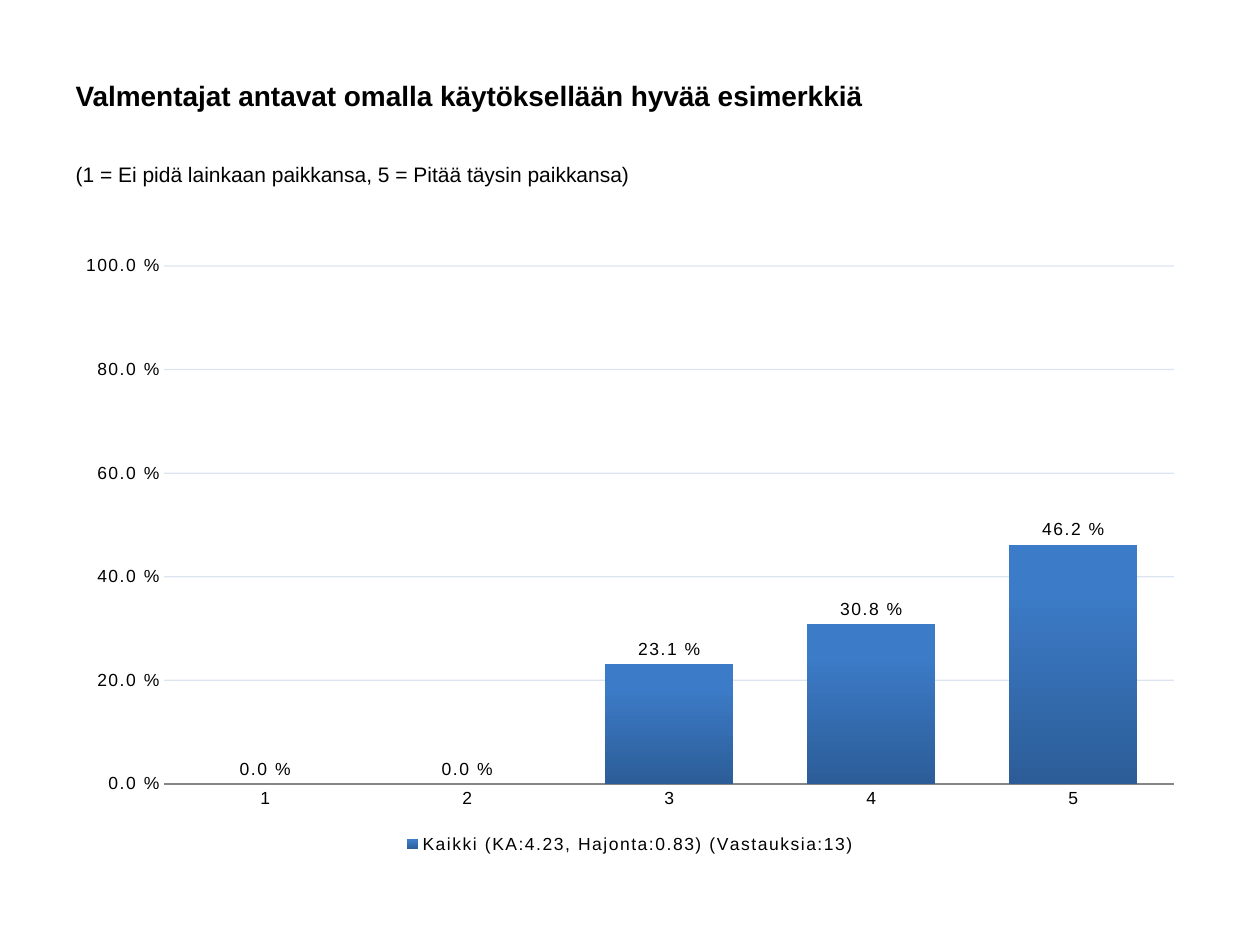
from dataclasses import dataclass

from lxml import etree
from pptx import Presentation
from pptx.chart.data import CategoryChartData
from pptx.dml.color import RGBColor
from pptx.enum.chart import XL_CHART_TYPE, XL_LABEL_POSITION, XL_LEGEND_POSITION, XL_TICK_MARK
from pptx.enum.text import MSO_ANCHOR, MSO_AUTO_SIZE, PP_ALIGN
from pptx.oxml import parse_xml
from pptx.oxml.ns import nsdecls, qn
from pptx.util import Pt

COLUMNS = XL_CHART_TYPE.COLUMN_CLUSTERED
BOTTOM = XL_LEGEND_POSITION.BOTTOM
OUTSIDE = XL_LABEL_POSITION.OUTSIDE_END
NO_TICK = XL_TICK_MARK.NONE
LEFT = PP_ALIGN.LEFT
MIDDLE, TOP = MSO_ANCHOR.MIDDLE, MSO_ANCHOR.TOP
FIXED = MSO_AUTO_SIZE.NONE

QUESTION = "Valmentajat antavat omalla käytöksellään hyvää esimerkkiä"
SCALE_NOTE = "(1 = Ei pidä lainkaan paikkansa, 5 = Pitää täysin paikkansa)"
GROUP = "Kaikki (KA:4.23, Hajonta:0.83) (Vastauksia:13)"
ANSWERS = {"1": 0, "2": 0, "3": 0.231, "4": 0.308, "5": 0.462}
PERCENT = "0.0\\ %"

PX = 914400 / 126
SLIDE = (1260, 945)
QUESTION_BOX = (63, 45, 1134, 100)
NOTE_BOX = (63, 155, 1134, 74)
CHART_BOX = (63, 244, 1134, 615)
PLOT_BOX = (164, 266, 1010, 518)


@dataclass(frozen=True)
class Theme:
    font: str = "Arial"
    text: str = "000000"
    grid: str = "4F81BD"
    axis: str = "868686"
    bar_bottom: str = "2C5D98"
    bar_top: str = "3C7BC7"
    question_size: int = 16
    note_size: int = 12
    chart_size: int = 10


THEME = Theme()


def emu(lengths):
    return [round(length * PX) for length in lengths]


def style_font(font, size, bold=False):
    for key, value in {"name": THEME.font, "size": Pt(size), "bold": bold}.items():
        setattr(font, key, value)
    font.color.rgb = RGBColor.from_string(THEME.text)


def place_text(holder, box, text, size, bold, anchor):
    holder.left, holder.top, holder.width, holder.height = emu(box)
    frame = holder.text_frame
    frame.text = text
    for key, value in {"vertical_anchor": anchor, "word_wrap": True, "auto_size": FIXED}.items():
        setattr(frame, key, value)
    paragraph = frame.paragraphs[0]
    paragraph.alignment = LEFT
    properties = paragraph._p.get_or_add_pPr()
    properties.set("marL", "0")
    properties.set("indent", "0")
    etree.SubElement(properties, qn("a:buNone"))
    style_font(paragraph.runs[0].font, size, bold)


def fix_plot_area(chart):
    left, top, width, height = CHART_BOX
    shares = {
        "x": (PLOT_BOX[0] - left) / width,
        "y": (PLOT_BOX[1] - top) / height,
        "w": PLOT_BOX[2] / width,
        "h": PLOT_BOX[3] / height,
    }
    modes = '<c:layoutTarget val="inner"/><c:xMode val="edge"/><c:yMode val="edge"/>'
    sizes = "".join(f'<c:{key} val="{share:.4f}"/>' for key, share in shares.items())
    layout = parse_xml(
        f'<c:layout {nsdecls("c")}><c:manualLayout>{modes}{sizes}</c:manualLayout></c:layout>'
    )
    plot_area = chart._chartSpace.xpath(".//c:plotArea")[0]
    for old in plot_area.findall(qn("c:layout")):
        plot_area.remove(old)
    plot_area.insert(0, layout)


def style_axes(chart):
    answers, shares = chart.category_axis, chart.value_axis
    for axis in (answers, shares):
        axis.major_tick_mark = axis.minor_tick_mark = NO_TICK
        style_font(axis.tick_labels.font, THEME.chart_size)
    answers.format.line.color.rgb = RGBColor.from_string(THEME.axis)
    answers.format.line.width = Pt(0.75)
    shares.format.line.fill.background()
    limits = {"minimum_scale": 0, "maximum_scale": 1, "major_unit": 0.2,
              "has_major_gridlines": True}
    for key, value in limits.items():
        setattr(shares, key, value)
    shares.tick_labels.number_format = PERCENT
    shares.tick_labels.number_format_is_linked = False
    grid = shares.major_gridlines.format.line
    grid.width = Pt(0.75)
    grid.color.rgb = RGBColor.from_string(THEME.grid)
    tint = shares.major_gridlines._xAx.xpath("c:majorGridlines//a:srgbClr")[0]
    etree.SubElement(tint, qn("a:alpha"), val="20000")


def style_bars(chart):
    plot = chart.plots[0]
    plot.gap_width = 58
    plot.vary_by_categories = False
    fill = plot.series[0].format.fill
    fill.gradient()
    fill.gradient_angle = 90
    shades = ((0, THEME.bar_bottom), (0.8, THEME.bar_top))
    for stop, (position, color) in zip(fill.gradient_stops, shades):
        stop.position = position
        stop.color.rgb = RGBColor.from_string(color)
    labels = plot.series[0].data_labels
    options = {"show_value": True, "number_format": PERCENT,
               "number_format_is_linked": False, "position": OUTSIDE}
    for key, value in options.items():
        setattr(labels, key, value)
    style_font(labels.font, THEME.chart_size)


def add_answers(slide):
    data = CategoryChartData(number_format=PERCENT)
    data.categories = list(ANSWERS)
    data.add_series(GROUP, list(ANSWERS.values()))
    chart = slide.shapes.add_chart(COLUMNS, *emu(CHART_BOX), data).chart
    style_font(chart.font, THEME.chart_size)
    chart.has_title = False
    chart.has_legend = True
    chart.legend.position = BOTTOM
    chart.legend.include_in_layout = False
    style_font(chart.legend.font, THEME.chart_size)
    style_axes(chart)
    style_bars(chart)
    fix_plot_area(chart)
    for properties in chart._chartSpace.xpath(".//a:defRPr"):
        properties.set("spc", "100")


def main():
    deck = Presentation()
    deck.slide_width, deck.slide_height = emu(SLIDE)
    slide = deck.slides.add_slide(deck.slide_layouts[1])
    question, note = slide.placeholders
    place_text(question, QUESTION_BOX, QUESTION, THEME.question_size, True, MIDDLE)
    place_text(note, NOTE_BOX, SCALE_NOTE, THEME.note_size, False, TOP)
    add_answers(slide)
    deck.save("out.pptx")


if __name__ == "__main__":
    main()
